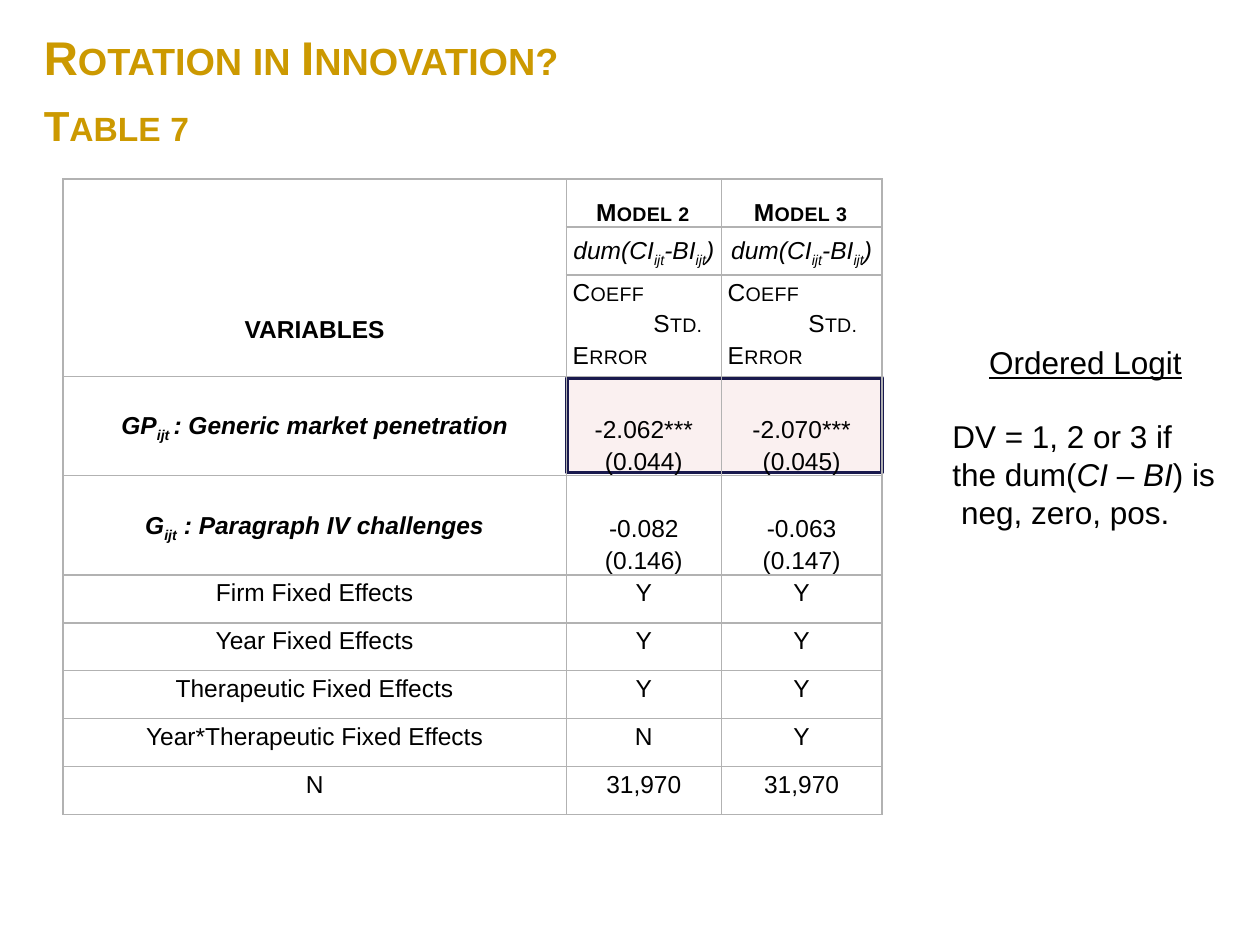
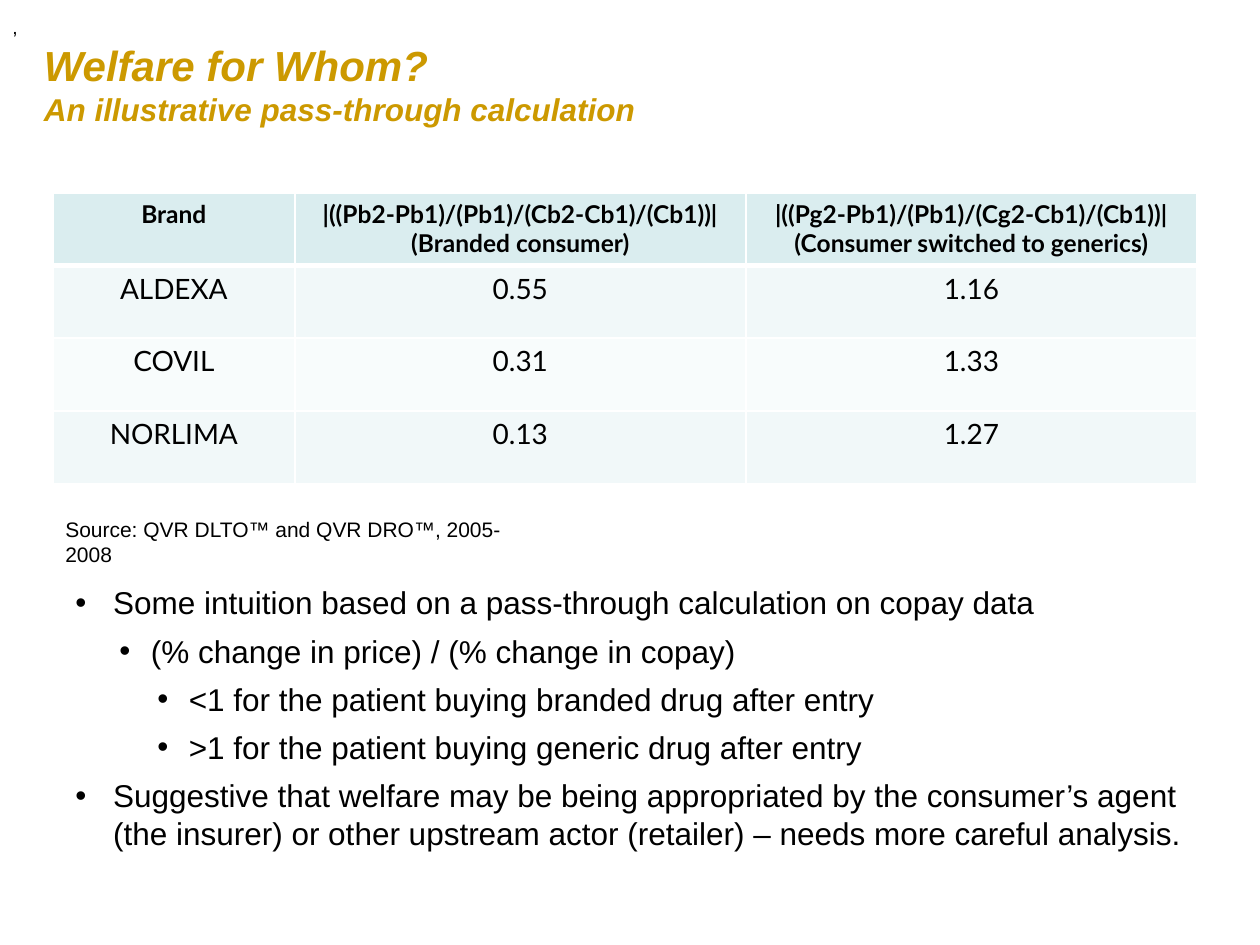
from dataclasses import dataclass, replace
from typing import Optional

from lxml import etree
from pptx import Presentation
from pptx.dml.color import RGBColor
from pptx.enum.shapes import MSO_SHAPE as Shape
from pptx.enum.text import MSO_ANCHOR as Anchor, PP_ALIGN as Align
from pptx.oxml.ns import qn
from pptx.util import Emu, Inches, Pt

COLORS = {
    "gold": "CC9900", "text": "000000", "white": "FFFFFF", "rule": "B2B2B2",
    "blush": "FAF0F0", "navy": "19194D",
    "header": "DAEDEF", "band": "F1F8F9", "pale": "F8FCFC",
}
WIDTH, HEIGHT = Inches(10), Inches(7.5)
COLUMN, ROW = WIDTH / 100, HEIGHT / 75  # the slide grid


@dataclass(frozen=True)
class Style:
    size: float
    color: str = "text"
    font: str = "Arial"
    bold: bool = False
    italic: bool = False
    underline: bool = False
    small_caps: bool = False
    subscript: bool = False
    tracking: float = 0


@dataclass(frozen=True)
class Span:
    text: str
    style: Style


@dataclass(frozen=True)
class Line:
    spans: tuple[Span, ...]
    align: Align = Align.LEFT
    before: float = 0
    spacing: float = 1.0
    left: float = 0
    hang: float = 0
    level: int = 0


@dataclass(frozen=True)
class Area:
    left: float
    top: float
    columns: float
    rows: float

    def frame(self) -> tuple[Emu, ...]:
        return (Emu(round(self.left * COLUMN)), Emu(round(self.top * ROW)),
                Emu(round(self.columns * COLUMN)), Emu(round(self.rows * ROW)))


@dataclass(frozen=True)
class Cell:
    lines: tuple[Line, ...]
    anchor: Anchor = Anchor.TOP
    bottom: float = 0


# Shared text styles
TITLE = Style(27, "gold", bold=True, small_caps=True)
SUBTITLE = Style(18, "gold", bold=True, italic=True)
BODY = Style(18)
ENTRY = Style(14)
ENTRY_ITALIC = replace(ENTRY, italic=True)
ENTRY_STRONG = replace(ENTRY_ITALIC, bold=True)
ENTRY_CAPS = replace(ENTRY, small_caps=True, tracking=0.2)
HEADER = Style(14, font="Lato", bold=True)
FIGURE = Style(16, font="Lato")


def line(text: str, style: Style, **options) -> Line:
    return Line((Span(text, style),), **options)


def subscripted(pieces: tuple[str, ...], style: Style) -> tuple[Span, ...]:
    """Every second piece is set as a subscript."""
    lowered = replace(style, subscript=True)
    return tuple(Span(piece, lowered if index % 2 else style)
                 for index, piece in enumerate(pieces))


def rgb(name: str) -> RGBColor:
    return RGBColor.from_string(COLORS[name])


def write(frame, lines: tuple[Line, ...]) -> None:
    for index, entry in enumerate(lines):
        para = frame.add_paragraph() if index else frame.paragraphs[0]
        para.alignment, para.level = entry.align, entry.level
        para.line_spacing = entry.spacing
        para.space_before = Pt(entry.before if index else 0)
        para.space_after = Pt(0)
        props = para._p.get_or_add_pPr()
        props.set("marL", str(Inches(entry.left)))
        props.set("indent", str(-Inches(entry.hang)))
        if entry.hang:
            etree.SubElement(props, qn("a:buFont"), typeface="Arial")
            etree.SubElement(props, qn("a:buChar"), char="•")
        else:
            etree.SubElement(props, qn("a:buNone"))
        for span in entry.spans:
            add_span(para, span)


def add_span(para, span: Span) -> None:
    run, style = para.add_run(), span.style
    run.text = span.text
    font = run.font
    font.name, font.size = style.font, Pt(style.size)
    font.bold, font.italic, font.underline = style.bold, style.italic, style.underline
    font.color.rgb = rgb(style.color)
    props = run._r.get_or_add_rPr()
    if style.small_caps:
        props.set("cap", "small")
    if style.subscript:
        props.set("baseline", "-25000")
    if style.tracking:
        props.set("spc", str(round(style.tracking * 100)))


def add_text(page, area: Area, lines: tuple[Line, ...],
             anchor: Anchor = Anchor.TOP, wrap: bool = True) -> None:
    frame = page.shapes.add_textbox(*area.frame()).text_frame
    frame.word_wrap, frame.vertical_anchor = wrap, anchor
    write(frame, lines)


def add_grid(page, area: Area, columns: tuple[float, ...], rows: tuple[float, ...]):
    table = page.shapes.add_table(len(rows), len(columns), *area.frame()).table
    table.first_row = table.horz_banding = False
    for column, width in zip(table.columns, columns):
        column.width = Emu(round(width * COLUMN))
    for row, height in zip(table.rows, rows):
        row.height = Emu(round(height * ROW))
    return table


def set_borders(cell, color: str, top: float = 1, bottom: float = 1) -> None:
    props = cell._tc.get_or_add_tcPr()
    for side, width in (("L", 1), ("R", 1), ("T", top), ("B", bottom)):
        border = etree.SubElement(props, qn(f"a:ln{side}"), w=str(Pt(width)))
        fill = etree.SubElement(border, qn("a:solidFill"))
        etree.SubElement(fill, qn("a:srgbClr"), val=COLORS[color])


# Slide 1: regression table
def entry(*lines: Line, anchor: Anchor = Anchor.TOP, bottom: float = 0) -> Cell:
    return Cell(tuple(replace(item, spacing=1.15) for item in lines), anchor, bottom)


def centered(text: str, style: Style = ENTRY) -> Line:
    return line(text, style, align=Align.CENTER)


def formula(pieces: tuple[str, ...], style: Style) -> Cell:
    return entry(Line(subscripted(pieces, style), Align.CENTER), anchor=Anchor.MIDDLE)


def estimate(coefficient: str, error: str) -> Cell:
    return entry(centered(coefficient), centered(f"({error})"), anchor=Anchor.BOTTOM)


def regression_rows() -> list[list[Optional[Cell]]]:
    model_style = replace(ENTRY_CAPS, bold=True)
    models = [entry(centered(name, model_style), anchor=Anchor.BOTTOM)
              for name in ("Model 2", "Model 3")]
    outcome = formula(("dum(CI", "ijt", "-BI", "ijt", ")"), ENTRY_ITALIC)
    measure = entry(line("Coeff", ENTRY_CAPS), line("Std.", ENTRY_CAPS, left=0.64),
                    line("Error", ENTRY_CAPS))
    variables = entry(centered("VARIABLES", replace(ENTRY, bold=True)),
                      anchor=Anchor.BOTTOM, bottom=0.26)
    controls = (
        ("Firm Fixed Effects", "Y", "Y"),
        ("Year Fixed Effects", "Y", "Y"),
        ("Therapeutic Fixed Effects", "Y", "Y"),
        ("Year*Therapeutic Fixed Effects", "N", "Y"),
        ("N", "31,970", "31,970"),
    )
    return [
        [variables, *models],
        [None, outcome, outcome],
        [None, measure, measure],
        [formula(("GP", "ijt ", ": Generic market penetration"), ENTRY_STRONG),
         estimate("-2.062***", "0.044"), estimate("-2.070***", "0.045")],
        [formula(("G", "ijt", " : Paragraph IV challenges"), ENTRY_STRONG),
         estimate("-0.082", "0.146"), estimate("-0.063", "0.147")],
        *[[entry(centered(text)) for text in control] for control in controls],
    ]


def build_rotation(page) -> None:
    # Highlight behind the penetration estimates
    box = page.shapes.add_shape(Shape.RECTANGLE, *Area(45, 30, 25, 7.5).frame())
    box.shadow.inherit = False
    box.fill.solid()
    box.fill.fore_color.rgb = rgb("blush")
    box.line.color.rgb, box.line.width = rgb("navy"), Pt(2)

    add_text(page, Area(2.5, 0.8, 95, 12.5), (
        line("Rotation in Innovation?", TITLE),
        line("Table 7", replace(TITLE, size=24), before=8),
    ), Anchor.MIDDLE)

    # Estimates
    short, tall = 3.81, 7.88
    heights = (short,) * 2 + (tall,) * 3 + (short,) * 5
    table = add_grid(page, Area(5, 14.2, 65, sum(heights)), (39.95, 12.3, 12.75), heights)
    for row, cells in enumerate(regression_rows()):
        for column, content in enumerate(cells):
            cell = table.cell(row, column)
            cell.margin_left = cell.margin_right = Inches(0.05)
            cell.margin_top = cell.margin_bottom = 0
            set_borders(cell, "rule")
            cell.fill.background()
            if content:
                cell.margin_bottom = Inches(content.bottom)
                cell.vertical_anchor = content.anchor
                write(cell.text_frame, content.lines)
    table.cell(0, 0).merge(table.cell(2, 0))

    # Method note
    italic = replace(BODY, italic=True)
    add_text(page, Area(74.6, 26.7, 23.1, 16.2), (
        line("Ordered Logit", replace(BODY, underline=True), align=Align.CENTER),
        line("DV = 1, 2 or 3 if", BODY, before=21),
        Line((Span("the dum(", BODY), Span("CI", italic), Span(" – ", BODY),
              Span("BI", italic), Span(") is", BODY))),
        line("neg, zero, pos.", BODY, left=0.07),
    ), wrap=False)


# Slide 2: pass-through calculation
def build_welfare(page) -> None:
    add_text(page, Area(2.5, 2.8, 95, 7.8), (
        line("Welfare for Whom?", replace(SUBTITLE, size=24)),
        line("An illustrative pass-through calculation", SUBTITLE),
    ), Anchor.BOTTOM)
    add_text(page, Area(0, 0.7, 100, 2.8), (line(",", Style(11)),), Anchor.MIDDLE)

    # Bullets
    outline = (
        (0, "Some intuition based on a pass-through calculation on copay data"),
        (1, "(% change in price) / (% change in copay)"),
        (2, "<1 for the patient buying branded drug after entry"),
        (2, ">1 for the patient buying generic drug after entry"),
        (0, "Suggestive that welfare may be being appropriated by the consumer’s agent "
            "(the insurer) or other upstream actor (retailer) – needs more careful analysis."),
    )
    add_text(page, Area(5, 45.8, 90, 25), tuple(
        line(text, BODY, before=6, level=level, left=0.3 * (level + 1),
             hang=0.25 if level else 0.3)
        for level, text in outline))

    # Ratios by brand
    records = (
        (("Brand",),
         ("|((Pb2-Pb1)/(Pb1)/(Cb2-Cb1)/(Cb1))|", "(Branded consumer)"),
         ("|((Pg2-Pb1)/(Pb1)/(Cg2-Cb1)/(Cb1))|", "(Consumer switched to generics)")),
        (("ALDEXA",), ("0.55",), ("1.16",)),
        (("COVIL",), ("0.31",), ("1.33",)),
        (("NORLIMA",), ("0.13",), ("1.27",)),
    )
    fills = ("header", "band", "pale", "band")
    heights = (5.77,) * len(records)
    table = add_grid(page, Area(4.2, 15.3, 90.8, sum(heights)), (19.2, 35.8, 35.8), heights)
    for row, (record, fill) in enumerate(zip(records, fills)):
        for column, texts in enumerate(record):
            cell = table.cell(row, column)
            set_borders(cell, "white", top=3 if row == 1 else 1, bottom=1 if row else 3)
            cell.fill.solid()
            cell.fill.fore_color.rgb = rgb(fill)
            style = FIGURE if row else HEADER
            write(cell.text_frame, tuple(centered(text, style) for text in texts))

    add_text(page, Area(4.2, 40.5, 38.5, 3),
             (line("Source: QVR DLTO™ and QVR DRO™, 2005-2008", Style(12)),), wrap=False)


def main() -> None:
    deck = Presentation()
    deck.slide_width, deck.slide_height = WIDTH, HEIGHT
    for build in (build_rotation, build_welfare):
        build(deck.slides.add_slide(deck.slide_layouts[6]))
    deck.save("out.pptx")


if __name__ == "__main__":
    main()
